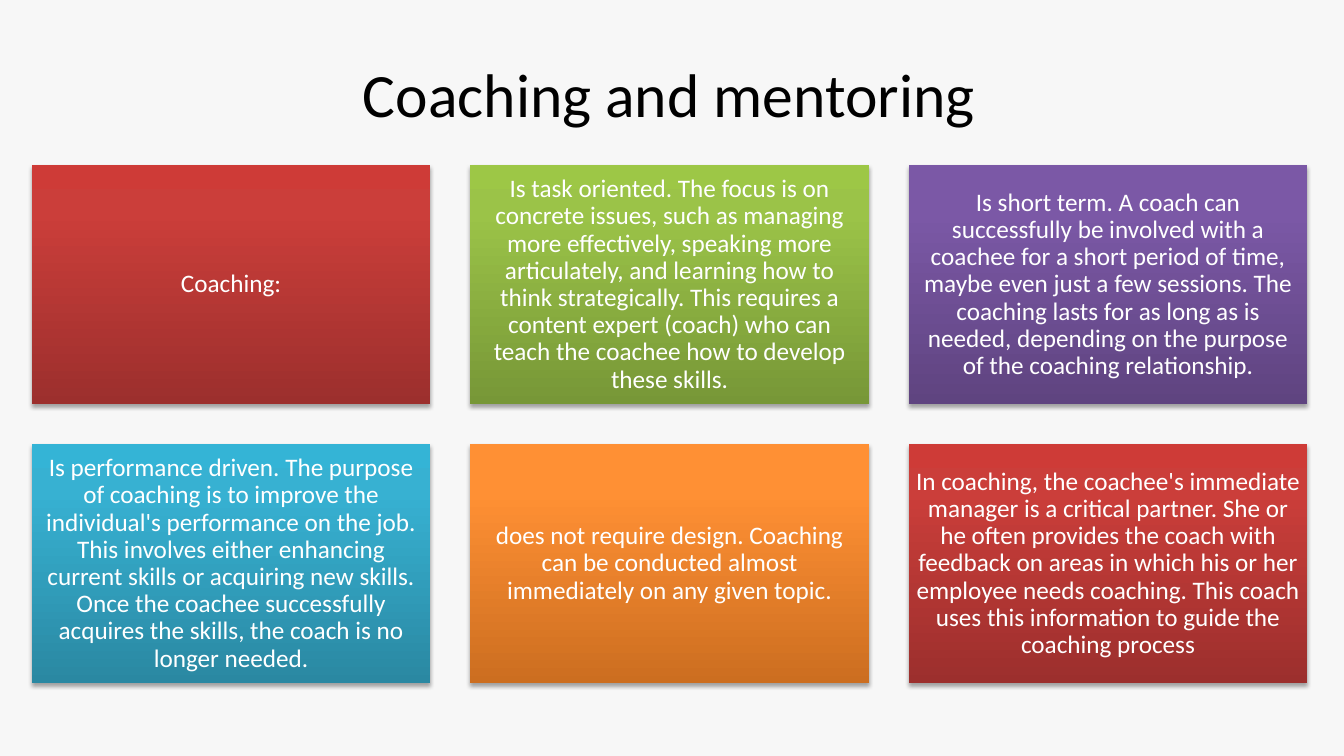
from lxml import etree
from pptx import Presentation
from pptx.dml.color import RGBColor
from pptx.enum.shapes import MSO_SHAPE as Shape
from pptx.enum.text import MSO_ANCHOR as Anchor, PP_ALIGN as Align
from pptx.oxml import parse_xml
from pptx.oxml.ns import nsdecls
from pptx.util import Cm, Pt

# Content
TITLE = "Coaching and mentoring"
CARDS = [
    ("red", "Coaching:"),
    ("green", "Is task oriented. The focus is on concrete issues, such as managing more "
              "effectively, speaking more articulately, and learning how to think "
              "strategically. This requires a content expert (coach) who can teach the "
              "coachee how to develop these skills."),
    ("purple", "Is short term. A coach can successfully be involved with a coachee for a "
               "short period of time, maybe even just a few sessions. The coaching lasts "
               "for as long as is needed, depending on the purpose of the coaching "
               "relationship."),
    ("blue", "Is performance driven. The purpose of coaching is to improve the "
             "individual's performance on the job. This involves either enhancing current "
             "skills or acquiring new skills. Once the coachee successfully acquires the "
             "skills, the coach is no longer needed."),
    ("orange", "does not require design. Coaching can be conducted almost immediately on "
               "any given topic."),
    ("red", "In coaching, the coachee's immediate manager is a critical partner. She or he "
            "often provides the coach with feedback on areas in which his or her employee "
            "needs coaching. This coach uses this information to guide the coaching "
            "process"),
]

# Style: each card colour runs from its bottom edge to its top edge
COLORS = {"background": "F7F7F7", "title": "000000", "text": "FFFFFF", "shadow": "000000"}
GRADIENTS = {
    "red": ("9C2F2D", "CB3E3A", "CE3B37"),
    "green": ("779737", "9BC348", "9DC746"),
    "purple": ("5F4480", "7B58A6", "7C57A8"),
    "blue": ("2A88A2", "37B1D2", "34B4D6"),
    "orange": ("CC6E20", "FF9034", "FF9136"),
}
STOPS = (0, 80, 100)
FONT = "Calibri"

# Grid, in centimetres
COLUMNS = 3
LEFT, TOP = 0.8, 4.16
CARD_WIDTH, CARD_HEIGHT, GAP = 10.05, 6.03, 1.0
INSET = 0.18


def write(shape, text, size, color, inset):
    frame = shape.text_frame
    frame.word_wrap = True
    frame.vertical_anchor = Anchor.MIDDLE
    frame.margin_left = frame.margin_right = Cm(inset)
    frame.margin_top = frame.margin_bottom = Cm(inset)
    para = frame.paragraphs[0]
    para.text = text
    para.alignment = Align.CENTER
    para.font.name = FONT
    para.font.size = Pt(size)
    para.font.color.rgb = RGBColor.from_string(COLORS[color])
    return para


def fill_gradient(shape, colors):
    shape.fill.gradient()
    shape.fill.gradient_angle = 90
    stops = shape.fill.gradient_stops
    stop_list = shape.element.spPr.find(".//{*}gsLst")
    for stop in list(stop_list):
        stop_list.remove(stop)
    for position, color in zip(STOPS, colors):
        stop_list.append(parse_xml(
            f'<a:gs {nsdecls("a")} pos="{position * 1000}">'
            f'<a:srgbClr val="{color}"/></a:gs>'))


def add_shadow(shape):
    shape.shadow.inherit = False
    effects = shape.element.spPr.find("{*}effectLst")
    effects.append(parse_xml(
        f'<a:outerShdw {nsdecls("a")} blurRad="{Pt(3.1)}" dist="{Pt(1.8)}" '
        f'dir="5400000" rotWithShape="0"><a:srgbClr val="{COLORS["shadow"]}">'
        '<a:alpha val="35000"/></a:srgbClr></a:outerShdw>'))


deck = Presentation()
deck.slide_width, deck.slide_height = Cm(33.87), Cm(19.05)
page = deck.slides.add_slide(deck.slide_layouts[6])
page.background.fill.solid()
page.background.fill.fore_color.rgb = RGBColor.from_string(COLORS["background"])

# Title
title = page.shapes.add_textbox(Cm(4.7), Cm(1.35), Cm(24.33), Cm(1.96))
write(title, TITLE, 44, "title", 0.13)

# Cards
for index, (color, text) in enumerate(CARDS):
    row, column = divmod(index, COLUMNS)
    card = page.shapes.add_shape(
        Shape.RECTANGLE,
        Cm(LEFT + column * (CARD_WIDTH + GAP)), Cm(TOP + row * (CARD_HEIGHT + GAP)),
        Cm(CARD_WIDTH), Cm(CARD_HEIGHT))
    fill_gradient(card, GRADIENTS[color])
    card.line.fill.background()
    add_shadow(card)
    write(card, text, 18, "text", INSET).line_spacing = 0.9

deck.save("out.pptx")
